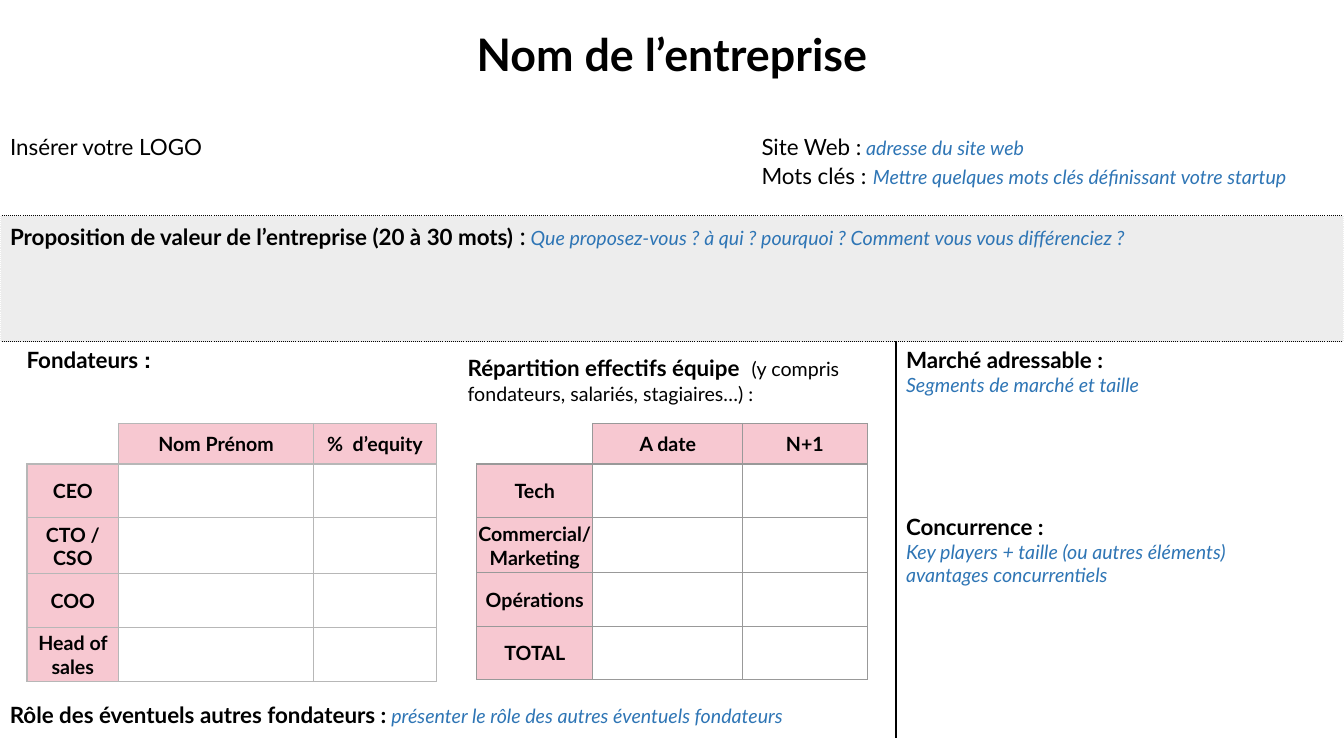
from dataclasses import dataclass
from typing import NamedTuple

from lxml import etree
from pptx import Presentation
from pptx.dml.color import RGBColor
from pptx.enum import shapes, text
from pptx.oxml import ns
from pptx.util import Pt


@dataclass(frozen=True)
class Theme:
    font: str = "Lato"
    black: str = "000000"
    white: str = "FFFFFF"
    blue: str = "2E75B5"
    band: str = "EDEDED"
    pink: str = "E23757"
    alpha: int = 27
    title: float = 32
    gap: float = 18
    head: float = 16
    body: float = 14


T = Theme()


class Run(NamedTuple):
    text: str
    size: float = T.head
    bold: bool = False
    italic: bool = False
    colour: str = T.black
    font: str = T.font


class Edge(NamedTuple):
    colour: str
    dash: str = "solid"


@dataclass(frozen=True)
class Staff:
    left: float
    cols: list[float]
    rows: list[float]
    heads: list[str]
    names: list[str]
    line: str


def bold(words: str, size: float = T.head, font: str = T.font) -> Run:
    return Run(words, size, bold=True, font=font)


def hint(words: str) -> Run:
    return Run(words, T.body, italic=True, colour=T.blue)


def write(frame, *lines: list[Run], align=text.PP_ALIGN.LEFT,
          before: dict[int, float] | None = None, spacing: float = 1) -> None:
    """Fill a text frame, one list of runs a paragraph; before maps line to gap."""
    frame.word_wrap = True
    for i, runs in enumerate(lines):
        par = frame.paragraphs[0] if i == 0 else frame.add_paragraph()
        par.alignment = align
        par.line_spacing = spacing
        par.space_before = Pt((before or {}).get(i, 0))
        for item in runs:
            run = par.add_run()
            run.text = item.text
            font = run.font
            font.name, font.size = item.font, Pt(item.size)
            font.bold, font.italic = item.bold, item.italic
            font.color.rgb = RGBColor.from_string(item.colour)


def paint(cell, colour: str, alpha: int = 100) -> None:
    cell.fill.solid()
    cell.fill.fore_color.rgb = RGBColor.from_string(colour)
    if alpha < 100:
        tint = cell.fill._xPr.find(".//" + ns.qn("a:srgbClr"))
        etree.SubElement(tint, ns.qn("a:alpha"), val=str(alpha * 1000))


def border(cell, **edges: Edge) -> None:
    """Set the sides L, R, T and B of a cell, in that order."""
    props = cell._tc.get_or_add_tcPr()
    for i, (side, edge) in enumerate(edges.items()):
        line = etree.Element(ns.qn("a:ln" + side), w=str(Pt(1)))
        fill = etree.SubElement(line, ns.qn("a:solidFill"))
        etree.SubElement(fill, ns.qn("a:srgbClr"), val=edge.colour)
        etree.SubElement(line, ns.qn("a:prstDash"), val=edge.dash)
        props.insert(i, line)


def grid(slide, left: float, top: float, cols: list[float], rows: list[float]):
    table = slide.shapes.add_table(
        len(rows), len(cols), Pt(left), Pt(top), Pt(sum(cols)), Pt(sum(rows))).table
    table.first_row = table.horz_banding = False
    for col, width in zip(table.columns, cols):
        col.width = Pt(width)
    for row, height in zip(table.rows, rows):
        row.height = Pt(height)
    return table


def frame_page(slide) -> None:
    table = grid(slide, 0, 91.5, [320, 203, 117, 320], [62.5, 90, 283])
    white, black = Edge(T.white), Edge(T.black)
    dots, pale = Edge(T.black, "dot"), Edge(T.white, "dot")
    sides = [dict(L=white, R=white, T=white, B=dots),
             dict(L=pale, R=pale, T=dots, B=dots),
             dict(L=white, R=white, T=dots, B=white)]
    for r, edges in enumerate(sides):
        for c in range(4):
            cell = table.cell(r, c)
            paint(cell, T.band if r == 1 else T.white)
            wall = {}
            if r == 2 and c >= 2:
                wall = {"R": black} if c == 2 else {"L": black}
            border(cell, **(edges | wall))
    for r, first, last in [(0, 2, 3), (1, 0, 3), (2, 0, 2)]:
        table.cell(r, first).merge(table.cell(r, last))

    site, team = table.cell(0, 2), table.cell(2, 0)
    site.margin_left, team.margin_left = Pt(21), Pt(19)
    write(table.cell(0, 0).text_frame, [Run("Insérer votre LOGO")])
    write(site.text_frame,
          [Run("Site Web :"), hint(" adresse du site web")],
          [Run("Mots clés :"), Run(" ", T.gap),
           hint("Mettre quelques mots clés définissant votre startup")])
    write(table.cell(1, 0).text_frame,
          [bold("Proposition de valeur de l’entreprise (20 à 30 mots)"),
           bold(" ", T.gap), Run(":", T.gap),
           hint(" Que proposez-vous ? à qui ? pourquoi ? "
                "Comment vous vous différenciez ?")])
    write(team.text_frame, [bold("Fondateurs "), bold(":", font="Arial")])
    write(table.cell(2, 3).text_frame,
          [bold("Marché adressable :")],
          [hint("Segments de marché et taille")],
          [bold("Concurrence :")],
          [hint("Key players + taille (ou autres éléments)")],
          [hint("avantages concurrentiels")], before={2: 83})


def draw_staff(slide, staff: Staff) -> None:
    table = grid(slide, staff.left, 302.4, staff.cols, staff.rows)
    edge = Edge(staff.line)
    for r in range(len(staff.rows)):
        for c in range(len(staff.cols)):
            cell = table.cell(r, c)
            cell.vertical_anchor = text.MSO_ANCHOR.MIDDLE
            cell.margin_left = cell.margin_right = cell.margin_top = Pt(0.75)
            cell.margin_bottom = 0
            if r == c == 0:
                cell.fill.background()
                border(cell, R=edge, B=edge)
                continue
            if r and c:
                cell.fill.background()
            else:
                label = staff.names[r - 1] if c == 0 else staff.heads[c - 1]
                write(cell.text_frame, [bold(label, T.body)],
                      align=text.PP_ALIGN.CENTER)
                paint(cell, T.pink, T.alpha)
            border(cell, L=edge, R=edge, T=edge, B=edge)


STAFF = [
    Staff(19.3, [65.5, 139.2, 87.8], [29, 38.4, 40, 38.4, 38.4],
          ["Nom Prénom", "%  d’equity"],
          ["CEO", "CTO / CSO", "COO", "Head of sales"], "B7B7B7"),
    Staff(340.5, [83, 107, 89], [29, 38.4, 39.4, 38.1, 38.1],
          ["A date", "N+1"],
          ["Tech", "Commercial/Marketing", "Opérations", "TOTAL"], "999999"),
]


def main() -> None:
    deck = Presentation()
    deck.slide_width, deck.slide_height = Pt(960), Pt(540)
    slide = deck.slides.add_slide(deck.slide_layouts[5])

    title = slide.shapes.title
    title.left, title.top, title.width, title.height = Pt(120), Pt(18.7), Pt(720), Pt(44)
    write(title.text_frame, [bold("Nom de l’entreprise", T.title)],
          align=text.PP_ALIGN.CENTER, spacing=0.9)
    title.text_frame.vertical_anchor = text.MSO_ANCHOR.MIDDLE

    frame_page(slide)
    for staff in STAFF:
        draw_staff(slide, staff)

    role = slide.shapes.add_shape(
        shapes.MSO_SHAPE.RECTANGLE, 0, Pt(497.5), Pt(638.6), Pt(24.5))
    role.shadow.inherit = False
    role.fill.solid()
    role.fill.fore_color.rgb = RGBColor.from_string(T.white)
    role.line.fill.background()
    role.text_frame.vertical_anchor = text.MSO_ANCHOR.TOP
    write(role.text_frame,
          [bold("Rôle des éventuels autres fondateurs :"),
           hint(" présenter le rôle des autres éventuels fondateurs")])

    split = slide.shapes.add_textbox(Pt(327), Pt(244), Pt(306.7), Pt(52)).text_frame
    split.margin_top = split.margin_bottom = Pt(7.2)
    write(split, [bold("Répartition effectifs équipe "), Run(" ", T.gap),
                  Run("(y compris fondateurs, salariés, stagiaires…) :", T.body)])
    deck.save("out.pptx")


if __name__ == "__main__":
    main()
